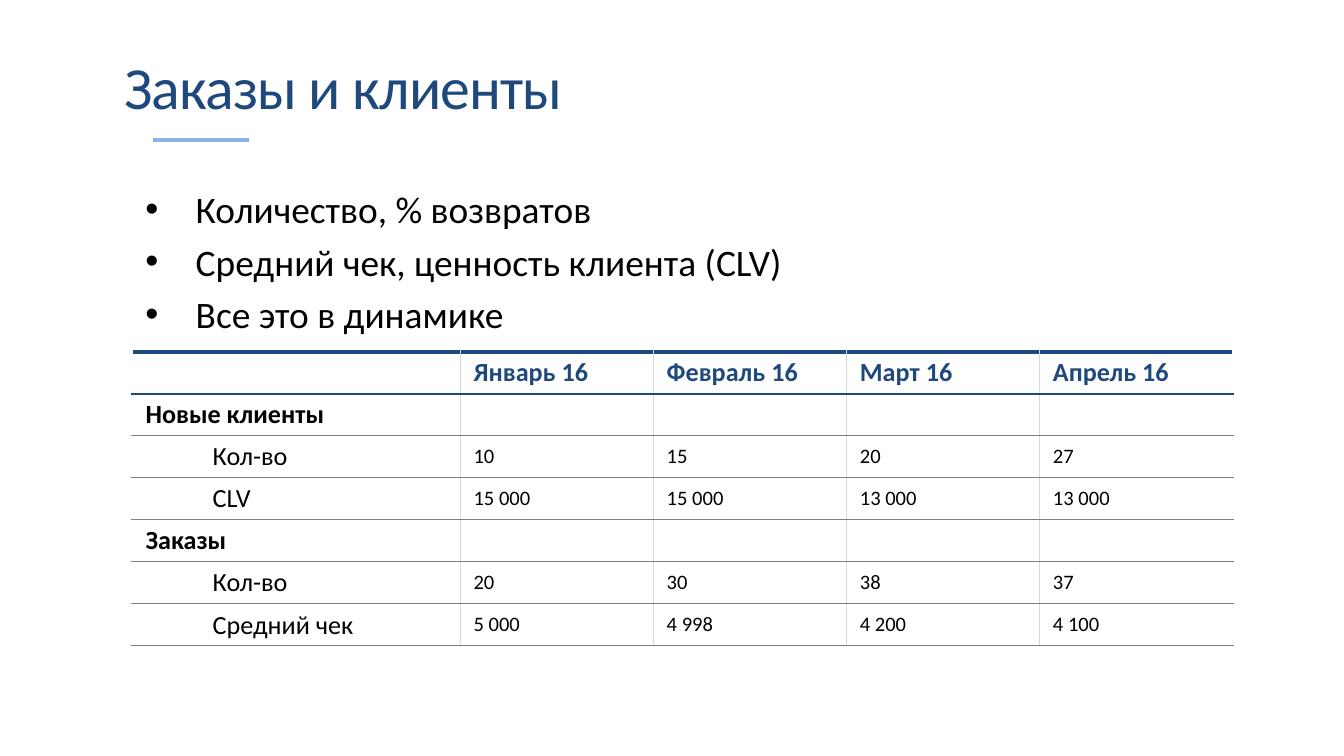
"""Build the slide on orders and clients with its monthly table."""
from lxml import etree
from pptx import Presentation
from pptx import util as u
from pptx.dml.color import RGBColor
from pptx.enum import shapes, text
from pptx.oxml import ns

NAVY, SKY, BLACK, WHITE = "1F497D", "8EB4E3", "000000", "FFFFFF"
GREY, PALE = "808080", "D9D9D9"
BULLETS = ["Количество, % возвратов", "Средний чек, ценность клиента (CLV)", "Все это в динамике"]
ROWS = [
    ["", "Январь 16", "Февраль 16", "Март 16", "Апрель 16"],
    ["Новые клиенты", "", "", "", ""],
    ["Кол-во", "10", "15", "20", "27"],
    ["CLV", "15 000", "15 000", "13 000", "13 000"],
    ["Заказы", "", "", "", ""],
    ["Кол-во", "20", "30", "38", "37"],
    ["Средний чек", "5 000", "4 998", "4 200", "4 100"],
]
GROUP_ROWS = (1, 4)


def color(value):
    return RGBColor.from_string(value)


def apply(target, values):
    for name, value in values.items():
        setattr(target, name, value)


def add_xml(parent, tag, **attributes):
    return etree.SubElement(parent, ns.qn(tag), **attributes)


class SlideBuilder:
    def __init__(self, page, font="Calibri"):
        self.page = page
        self.font = font

    def add_span(self, para, words, size, hue=BLACK, bold=False):
        span = para.add_run()
        span.text = words
        apply(span.font, {"name": self.font, "size": u.Pt(size), "bold": bold})
        span.font.color.rgb = color(hue)
        return span

    def title(self, words, left, top, width, height):
        box = self.page.shapes.title
        apply(box, {"left": u.Cm(left), "top": u.Cm(top),
                    "width": u.Cm(width), "height": u.Cm(height)})
        apply(box.text_frame, {"vertical_anchor": text.MSO_ANCHOR.MIDDLE, "word_wrap": True})
        para = box.text_frame.paragraphs[0]
        para.alignment = text.PP_ALIGN.LEFT
        span = self.add_span(para, words, 32, NAVY)
        span._r.get_or_add_rPr().set("spc", "-50")

    def rule(self, left, top, width):
        line = self.page.shapes.add_connector(
            shapes.MSO_CONNECTOR.STRAIGHT, u.Cm(left), u.Cm(top), u.Cm(left + width), u.Cm(top))
        line.line.color.rgb = color(SKY)
        line.line.width = u.Pt(2.25)
        add_xml(line._element.spPr, "a:effectLst")

    def bullets(self, items, *area):
        box = self.page.shapes.add_textbox(*map(u.Cm, area))
        frame = box.text_frame
        frame.word_wrap = True
        for index, words in enumerate(items):
            para = frame.add_paragraph() if index else frame.paragraphs[0]
            props = para._p.get_or_add_pPr()
            for name, value in {"marL": u.Cm(0.95), "indent": u.Cm(-0.95)}.items():
                props.set(name, str(value))
            add_xml(props, "a:buFont", typeface="Arial")
            add_xml(props, "a:buChar", char="•")
            para.space_before = u.Pt(4 if index else 0)
            self.add_span(para, words, 20)

    def border(self, cell, side, hue, width):
        line = add_xml(cell._tc.get_or_add_tcPr(), f"a:ln{side}", w=str(u.Pt(width)))
        add_xml(add_xml(line, "a:solidFill"), "a:srgbClr", val=hue)

    def cell(self, cell, words, row, column, last):
        apply(cell, {"vertical_anchor": text.MSO_ANCHOR.MIDDLE,
                     "margin_left": u.Cm(0.25), "margin_right": u.Cm(0.25),
                     "margin_top": u.Cm(0.1), "margin_bottom": u.Cm(0.1)})
        outer, inner, across = (WHITE, 1), (PALE, 0.5), (GREY, 0.5)
        top = {0: (NAVY, 2.25), 1: (NAVY, 1.5)}.get(row, across)
        self.border(cell, "L", *(inner if column else outer))
        self.border(cell, "R", *(outer if column == last else inner))
        self.border(cell, "T", *top)
        self.border(cell, "B", *(across if row else (NAVY, 1.5)))
        cell.fill.background()
        para = cell.text_frame.paragraphs[0]
        if not words:
            add_xml(para._p, "a:endParaRPr", sz="1100")
            return
        heading = row == 0 or row in GROUP_ROWS
        if column == 0 and not heading:
            para.level = 1
            para._p.get_or_add_pPr().set("marL", str(u.Cm(1.27)))
        size = 14 if heading or column == 0 else 11
        self.add_span(para, words, size, BLACK if row else NAVY, heading)

    def table(self, rows, left, top, widths, row_height):
        frame = self.page.shapes.add_table(
            len(rows), len(widths), u.Cm(left), u.Cm(top),
            u.Cm(sum(widths)), u.Cm(row_height * len(rows)))
        grid = frame.table
        apply(grid, {"first_row": False, "horz_banding": False})
        for column, width in zip(grid.columns, widths):
            column.width = u.Cm(width)
        for row, values in enumerate(rows):
            grid.rows[row].height = u.Cm(row_height)
            for column, words in enumerate(values):
                self.cell(grid.cell(row, column), words, row, column, len(widths) - 1)


def main():
    deck = Presentation()
    apply(deck, {"slide_width": u.Cm(25.4), "slide_height": u.Cm(14.29)})
    builder = SlideBuilder(deck.slides.add_slide(deck.slide_layouts[5]))
    builder.rule(2.9, 2.65, 1.8)
    builder.title("Заказы и клиенты", 2.1, 0.58, 21.2, 2.08)
    builder.bullets(BULLETS, 2.5, 3.4, 20.8, 9.07)
    builder.table(ROWS, 2.5, 6.65, [6.2] + [3.65] * 4, 0.79)
    deck.save("out.pptx")


if __name__ == "__main__":
    main()
